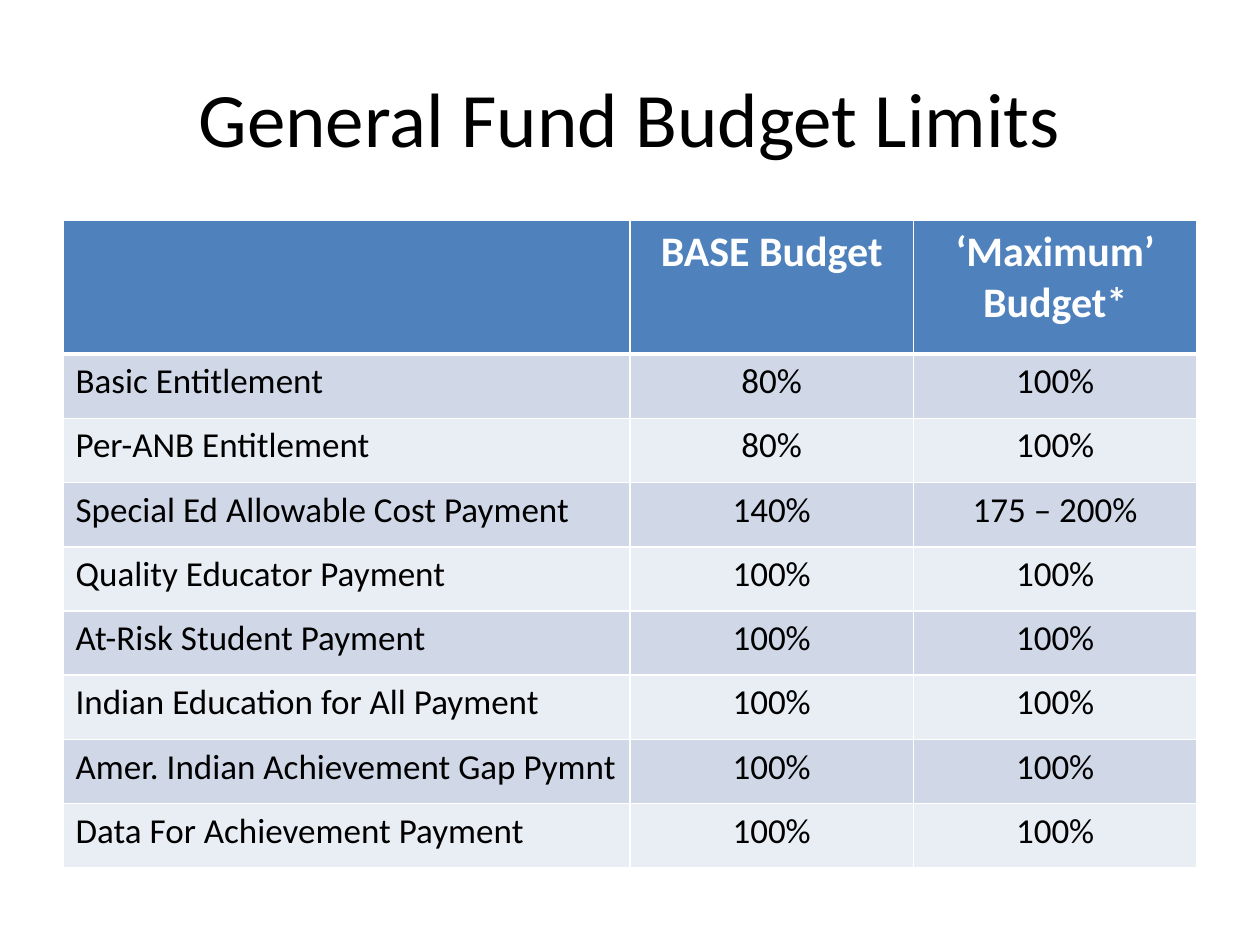
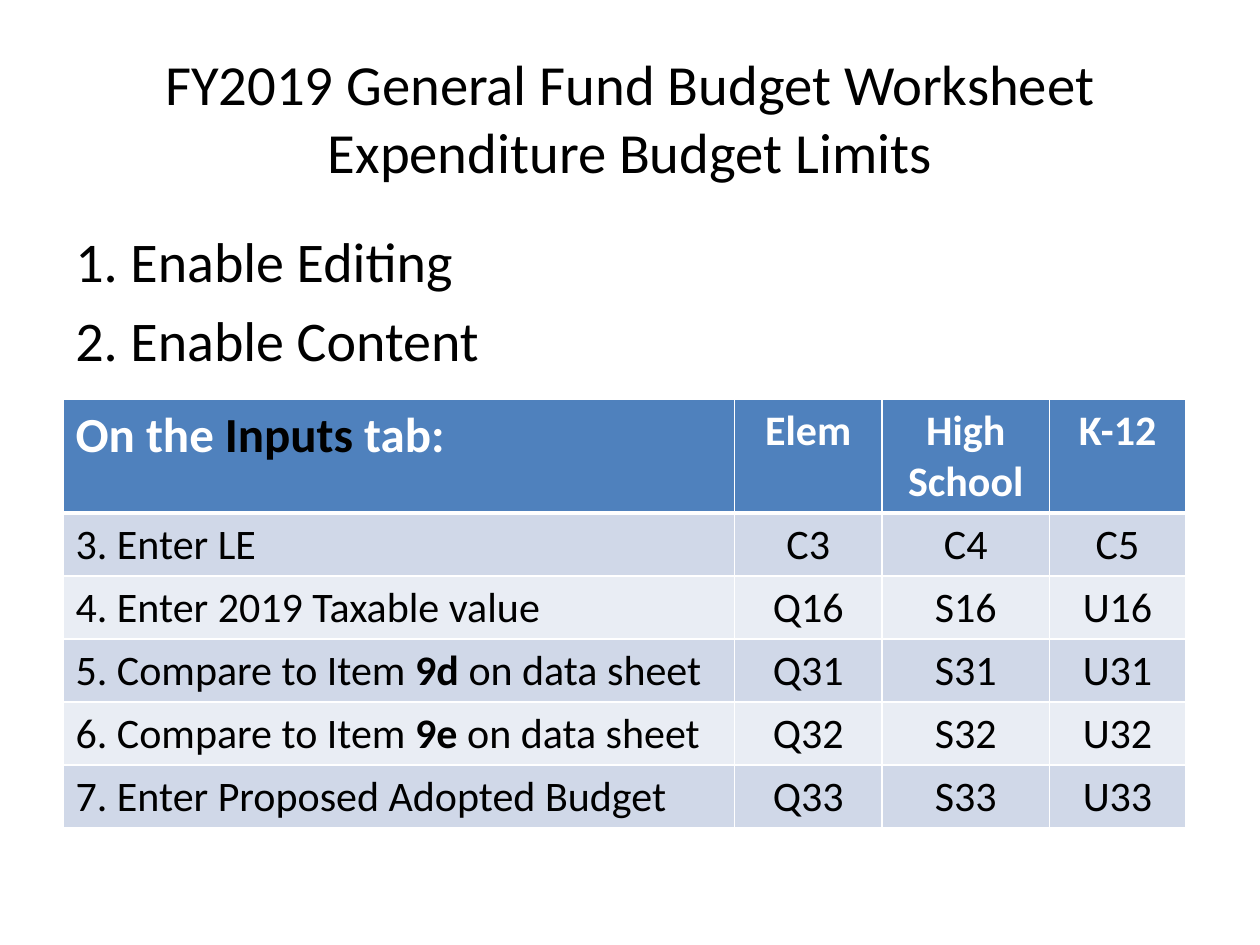
from dataclasses import dataclass

from lxml import etree
from pptx import Presentation
from pptx.dml.color import RGBColor
from pptx.enum import text as t
from pptx.oxml import ns
from pptx.util import Inches, Pt


@dataclass(frozen=True)
class Theme:
    font: str = "Calibri"
    ink: str = "000000"
    paper: str = "FFFFFF"
    header: str = "4F81BD"
    bands: tuple = ("D0D8E8", "E9EDF4")
    title_size: float = 44
    long_title_size: float = 32.4
    step_size: float = 32
    lead_size: float = 28
    head_size: float = 24
    row_size: float = 20
    rule: float = 1
    header_rule: float = 3


THEME = Theme()
TITLE_BOX = (0.5, 0.3, 9, 1.25)
BODY_BOX = (0.5, 1.75, 9, 4.95)

LIMITS = [
    ("", "BASE Budget", "‘Maximum’ Budget*"),
    ("Basic Entitlement", "80%", "100%"),
    ("Per-ANB Entitlement", "80%", "100%"),
    ("Special Ed Allowable Cost Payment", "140%", "175 – 200%"),
    ("Quality Educator Payment", "100%", "100%"),
    ("At-Risk Student Payment", "100%", "100%"),
    ("Indian Education for All Payment", "100%", "100%"),
    ("Amer. Indian Achievement Gap Pymnt", "100%", "100%"),
    ("Data For Achievement Payment", "100%", "100%"),
]

STEPS = ["1. Enable Editing", "2. Enable Content"]

# Words between bars are emphasised.
INPUTS = [
    ("On the |Inputs| tab:", "Elem", "High School", "K-12"),
    ("3. Enter LE", "C3", "C4", "C5"),
    ("4. Enter 2019 Taxable value", "Q16", "S16", "U16"),
    ("5. Compare to Item |9d| on data sheet", "Q31", "S31", "U31"),
    ("6. Compare to Item |9e| on data sheet", "Q32", "S32", "U32"),
    ("7. Enter Proposed Adopted Budget", "Q33", "S33", "U33"),
]


def style_font(font, size, color=THEME.ink, bold=False):
    font.name = THEME.font
    font.size = Pt(size)
    font.bold = bold
    font.color.rgb = RGBColor.from_string(color)


def add_text(slide, box, wording, size, align=t.PP_ALIGN.LEFT,
             anchor=t.MSO_ANCHOR.TOP, space_before=0):
    frame = slide.shapes.add_textbox(*map(Inches, box)).text_frame
    frame.word_wrap = True
    frame.vertical_anchor = anchor
    frame.text = wording
    for paragraph in frame.paragraphs:
        paragraph.alignment = align
        paragraph.space_before = Pt(space_before)
        for run in paragraph.runs:
            style_font(run.font, size)


def add_title(slide, wording, size=THEME.title_size):
    add_text(slide, TITLE_BOX, wording, size, t.PP_ALIGN.CENTER, t.MSO_ANCHOR.MIDDLE)


def draw_borders(cell, top, bottom):
    properties = cell._tc.get_or_add_tcPr()
    widths = {"lnL": THEME.rule, "lnR": THEME.rule, "lnT": top, "lnB": bottom}
    for side, width in widths.items():
        line = etree.SubElement(properties, ns.qn(f"a:{side}"), w=str(Pt(width)))
        fill = etree.SubElement(line, ns.qn("a:solidFill"))
        etree.SubElement(fill, ns.qn("a:srgbClr"), val=THEME.paper)


def fill_cell(cell, wording, size, row, column):
    is_header = row == 0
    draw_borders(cell,
                 top=THEME.header_rule if row == 1 else THEME.rule,
                 bottom=THEME.header_rule if is_header else THEME.rule)
    cell.fill.solid()
    background = THEME.header if is_header else THEME.bands[(row - 1) % 2]
    cell.fill.fore_color.rgb = RGBColor.from_string(background)

    paragraph = cell.text_frame.paragraphs[0]
    paragraph.alignment = t.PP_ALIGN.CENTER if column else t.PP_ALIGN.LEFT
    for index, piece in enumerate(wording.split("|")):
        emphasised = index % 2 == 1
        run = paragraph.add_run()
        run.text = piece
        color = THEME.paper if is_header and not emphasised else THEME.ink
        style_font(run.font, size, color, bold=is_header or emphasised)


def add_banded_table(slide, left, top, rows, widths, header_height, row_height,
                     row_size, lead_size=THEME.head_size):
    """Header row over banded rows; lead_size is for the header's first cell."""
    heights = [header_height] + [row_height] * (len(rows) - 1)
    box = map(Inches, (left, top, sum(widths), sum(heights)))
    table = slide.shapes.add_table(len(rows), len(widths), *box).table
    for column, width in zip(table.columns, widths):
        column.width = Inches(width)
    for r, (cells, height) in enumerate(zip(rows, heights)):
        table.rows[r].height = Inches(height)
        for c, wording in enumerate(cells):
            header_size = THEME.head_size if c else lead_size
            fill_cell(table.cell(r, c), wording, row_size if r else header_size, r, c)


def build_limits_slide(slide):
    add_title(slide, "General Fund Budget Limits")
    left, top, width, _ = BODY_BOX
    add_banded_table(slide, left, top, LIMITS, (width / 2, width / 4, width / 4),
                     header_height=1.06, row_height=0.51, row_size=THEME.row_size)


def build_worksheet_slide(slide):
    add_title(slide, "FY2019 General Fund Budget Worksheet\vExpenditure Budget Limits",
              THEME.long_title_size)
    add_text(slide, BODY_BOX, "\n".join(STEPS), THEME.step_size,
             space_before=THEME.step_size * 0.2)
    left, top, _, _ = BODY_BOX
    add_banded_table(slide, left, top + 1.42, INPUTS, (5.33, 1.17, 1.33, 1.08),
                     header_height=0.9, row_height=0.5, row_size=THEME.head_size,
                     lead_size=THEME.lead_size)


def main():
    deck = Presentation()
    deck.slide_width, deck.slide_height = Inches(10), Inches(7.5)
    blank = deck.slide_layouts[6]
    for build in (build_limits_slide, build_worksheet_slide):
        build(deck.slides.add_slide(blank))
    deck.save("out.pptx")


if __name__ == "__main__":
    main()
